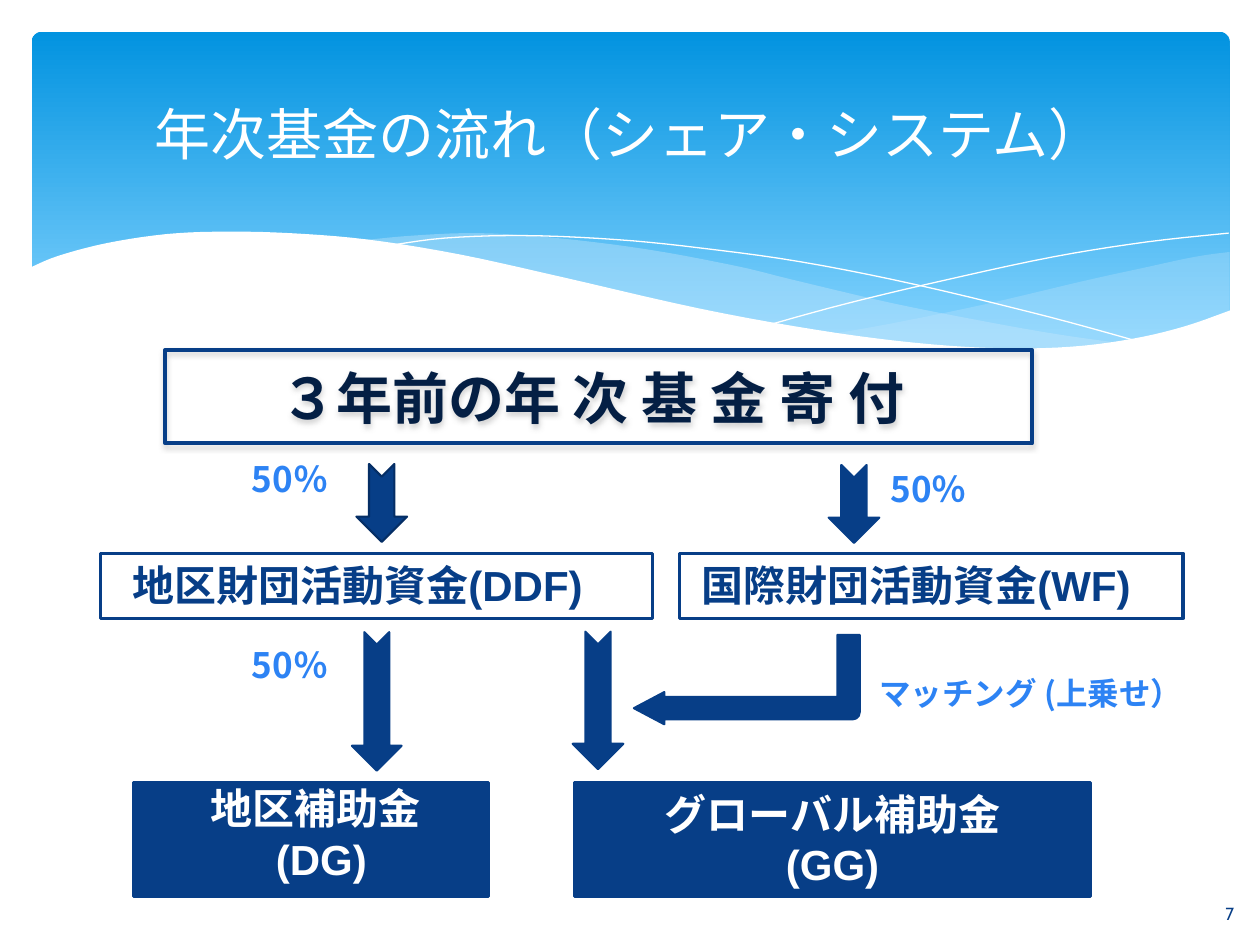
from lxml.etree import SubElement
from pptx import Presentation
from pptx.dml.color import RGBColor
from pptx.enum.shapes import MSO_SHAPE as Shape
from pptx.enum.text import MSO_ANCHOR as Anchor, PP_ALIGN as Align
from pptx.oxml.ns import qn
from pptx.util import Cm, Pt

NAVY, DARK, BLUE, PALE, WHITE = "073E87", "041F44", "2D83F4", "C6E7FC", "FFFFFF"
CJK = "Noto Sans CJK JP"

HEADING = {"size": Pt(32), "name": "Arial Narrow", "bold": False}
SOURCE = {"size": Pt(32), "name": CJK, "bold": True}
FUND = {"size": Pt(24), "name": "Arial", "bold": True}
SHARE = {"size": Pt(20), "name": CJK, "bold": True}
MATCHING = {"size": Pt(18), "name": CJK, "bold": True}
NUMBER = {"size": Pt(10), "name": "Cabin", "bold": False}

RIGHT_WAVE = [
    [(24.79, 5.08), (24.08, 5.18), (23.01, 5.41), (21.87, 5.66), (19.79, 6.15),
     (17.93, 6.53), (16.79, 6.73)],
    [(16.79, 6.73), (17.91, 6.88), (19.23, 7.01), (20.4, 7.06), (21.69, 7.01),
     (22.78, 6.86), (23.75, 6.65), (24.79, 6.27)],
]
MIDDLE_WAVE = [
    [(7.26, 4.85), (8.33, 4.75), (9.65, 4.7), (11.23, 4.8), (13.06, 5.03),
     (14.83, 5.36), (15.98, 5.64), (17.93, 6.1), (19.69, 6.45), (21.26, 6.73),
     (22.68, 6.93)],
    [(22.68, 6.93), (21.54, 7.04), (20.22, 7.06), (18.69, 6.99), (16.89, 6.76),
     (14.83, 6.4), (13.46, 6.1), (11.4, 5.64), (9.73, 5.26), (8.2, 4.98),
     (7.26, 4.85)],
]
FALLING_LINE = [
    [(7.85, 4.95), (8.97, 4.8), (10.57, 4.75), (12.42, 4.83), (14.12, 5),
     (16.15, 5.28), (18.47, 5.74), (21.11, 6.38), (23.04, 6.91)],
]
RISING_LINE = [
    [(15.57, 6.53), (17.07, 6.12), (19, 5.66), (21.23, 5.18), (23.11, 4.88),
     (24.77, 4.7)],
]
WHITE_WAVE = [
    [(24.82, 6.25), (23.88, 6.58), (22.83, 6.83), (21.59, 6.99), (20.14, 7.02),
     (18.44, 6.91), (16.46, 6.65), (14.1, 6.22), (11.35, 5.59), (9.27, 5.13),
     (7.42, 4.83), (5.84, 4.7), (4.5, 4.67), (3.35, 4.72), (2.16, 4.9),
     (1.17, 5.16), (0.58, 5.41)],
    [(0.58, 8.36), (24.82, 8.36)],
]


def color(value):
    return RGBColor.from_string(value)


def lengths(values):
    return [Cm(value) for value in values]


def paint(shape, fill=None, line=None, width=1.25, alpha=None):
    shape.shadow.inherit = False
    if fill:
        shape.fill.solid()
        shape.fill.fore_color.rgb = color(fill)
    else:
        shape.fill.background()
    if alpha:
        tint = next(shape.element.spPr.iter(qn("a:srgbClr")))
        SubElement(tint, qn("a:alpha"), val=str(alpha * 1000))
    if line:
        shape.line.color.rgb = color(line)
        shape.line.width = Pt(width)
    else:
        shape.line.fill.background()


def smooth(points, steps=5):
    if len(points) < 3:
        return points
    padded = [points[0], *points, points[-1]]
    curve = [points[0]]
    for before, start, end, after in zip(padded, padded[1:], padded[2:], padded[3:]):
        for step in range(1, steps + 1):
            t = step / steps
            curve.append(tuple(
                (2 * b + (c - a) * t + (2 * a - 5 * b + 4 * c - d) * t ** 2
                 + (3 * b - a - 3 * c + d) * t ** 3) / 2
                for a, b, c, d in zip(before, start, end, after)))
    return curve


def add_wave(page, edges, close=True, **style):
    points = [lengths(point) for edge in edges for point in smooth(edge)]
    builder = page.shapes.build_freeform(*points[0])
    builder.add_line_segments(points[1:], close=close)
    paint(builder.convert_to_shape(), **style)


def add_banner(page):
    banner = page.shapes.add_shape(
        Shape.ROUNDED_RECTANGLE, *lengths((0.64, 0.64, 24.15, 6.86)))
    banner.adjustments[0] = 0.03
    paint(banner)
    banner.fill.gradient()
    banner.fill.gradient_angle = 270
    stops = [("0293E0", 0), ("83D3FE", 0.9)]
    for stop, (value, position) in zip(banner.fill.gradient_stops, stops):
        stop.color.rgb = color(value)
        stop.position = position
    add_wave(page, RIGHT_WAVE, fill=PALE, alpha=29)
    add_wave(page, MIDDLE_WAVE, fill=PALE, alpha=40)
    for line in (FALLING_LINE, RISING_LINE):
        add_wave(page, line, close=False, line=WHITE, width=0)
    add_wave(page, WHITE_WAVE, fill=WHITE)


def write(box, lines, font, ink, align=Align.LEFT, anchor=Anchor.TOP, left=0.25, **layout):
    frame = box.text_frame
    frame.word_wrap = True
    frame.vertical_anchor = anchor
    frame.margin_left = Cm(left)
    for index, line in enumerate(lines):
        para = frame.add_paragraph() if index else frame.paragraphs[0]
        para.alignment = align
        for name, value in layout.items():
            setattr(para, name, value)
        span = para.add_run()
        span.text = line
        for name, value in font.items():
            setattr(span.font, name, value)
        span.font.color.rgb = color(ink)
        SubElement(span.font._element, qn("a:ea"), typeface=CJK)


def add_box(page, place, lines, font, ink, fill=None, width=1.75, **text):
    box = page.shapes.add_shape(Shape.RECTANGLE, *lengths(place))
    paint(box, fill, NAVY, width)
    write(box, lines, font, ink, **text)
    return box


def add_label(page, place, text, font, ink=BLUE, **layout):
    write(page.shapes.add_textbox(*lengths(place)), [text], font, ink, **layout)


def add_arrow(page, place, kind=Shape.NOTCHED_RIGHT_ARROW, turn=90, line=NAVY, bends=()):
    arrow = page.shapes.add_shape(kind, *lengths(place))
    arrow.rotation = turn
    for index, bend in enumerate(bends):
        arrow.adjustments[index] = bend
    paint(arrow, NAVY, line)


def add_shadow(box):
    effects = box.element.spPr.find(qn("a:effectLst"))
    shadow = SubElement(effects, qn("a:outerShdw"), blurRad=str(Pt(3.1)),
                        dist=str(Pt(1.8)), dir="5400000", rotWithShape="0")
    tint = SubElement(shadow, qn("a:srgbClr"), val="808080")
    SubElement(tint, qn("a:alpha"), val="35000")


def add_title(page, text):
    title = page.shapes.title
    title.left, title.top, title.width, title.height = lengths((1.27, 0.94, 22.86, 3.48))
    write(title, [text], HEADING, WHITE, Align.CENTER, Anchor.MIDDLE)
    title.element.getparent().append(title.element)


def main():
    deck = Presentation()
    deck.slide_width, deck.slide_height = Cm(25.4), Cm(19.05)
    page = deck.slides.add_slide(deck.slide_layouts[5])
    add_banner(page)

    add_box(page, (2.69, 15.77, 7.16, 2.31), ["地区補助金", " (DG)"], FUND, WHITE, NAVY,
            align=Align.CENTER, left=0.43, line_spacing=0.9, space_before=Pt(3))
    add_box(page, (11.58, 15.77, 10.41, 2.31), ["グローバル補助金", " (GG) "], FUND, WHITE,
            NAVY, align=Align.CENTER)
    donation = add_box(page, (3.33, 7.06, 17.48, 1.88), ["３年前の年 次 基 金 寄 付 "], SOURCE,
                       DARK, width=2.25, align=Align.CENTER, anchor=Anchor.MIDDLE)
    add_shadow(donation)
    add_box(page, (2.03, 11.15, 11.13, 1.32), ["地区財団活動資金(DDF)"], FUND, NAVY, left=0.64)
    add_box(page, (13.69, 11.15, 10.16, 1.32), ["国際財団活動資金(WF)"], FUND, NAVY, left=0.45)

    for left, top in ((4.83, 9.09), (17.7, 9.3), (4.83, 12.85)):
        add_label(page, (left, top, 2.5, 1.12), "50％", SHARE)
    add_label(page, (17.48, 13.46, 7.01, 1.02), "マッチング (上乗せ）", MATCHING)

    add_arrow(page, (6.91, 9.63, 1.57, 1.02), line="052E65")
    for place in ((16.43, 9.65, 1.57, 1.02), (6.2, 13.64, 2.79, 1), (10.67, 13.61, 2.77, 1.02)):
        add_arrow(page, place)
    add_arrow(page, (12.78, 12.8, 4.55, 1.8), Shape.BENT_ARROW, 180,
              bends=(0.25, 0.18, 0.34, 0.08))

    add_title(page, "年次基金の流れ（シェア・システム）")
    add_label(page, (24.28, 17.91, 1.02, 1.02), "7", NUMBER, NAVY,
              align=Align.CENTER, anchor=Anchor.MIDDLE)
    deck.save("out.pptx")


if __name__ == "__main__":
    main()
